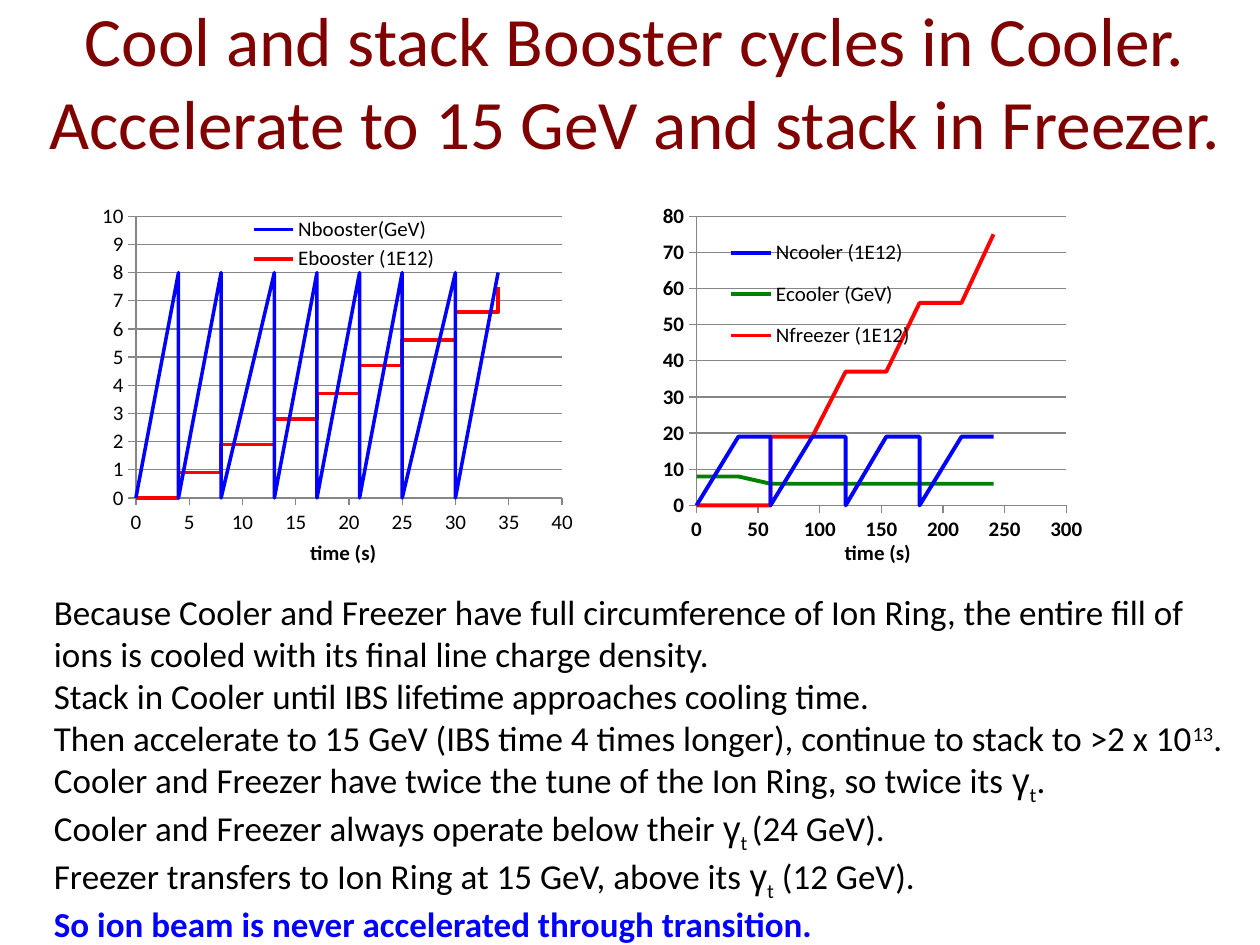
from typing import NamedTuple

from lxml import etree
from pptx import Presentation
from pptx import util as u
from pptx.chart.data import XyChartData
from pptx.dml.color import RGBColor
from pptx.enum import chart as chart_enum
from pptx.enum import text
from pptx.oxml.ns import qn

MAROON = RGBColor(0x80, 0x00, 0x00)
BLACK = RGBColor(0x00, 0x00, 0x00)
BLUE = RGBColor(0x00, 0x00, 0xFF)
RED = RGBColor(0xFF, 0x00, 0x00)
GREEN = RGBColor(0x00, 0x80, 0x00)
GREY = RGBColor(0x86, 0x86, 0x86)

WIDTH, HEIGHT = u.Inches(10), u.Inches(7.5)
COLUMN, ROW = WIDTH / 100, HEIGHT / 75
SUPER, SUB = 30000, -25000


class Area(NamedTuple):
    column: float
    row: float
    columns: float
    rows: float

    def lengths(self) -> tuple:
        return (round(self.column * COLUMN), round(self.row * ROW),
                round(self.columns * COLUMN), round(self.rows * ROW))


class Curve(NamedTuple):
    name: str
    color: RGBColor
    values: list


class Graph(NamedTuple):
    area: Area
    times: list
    curves: list
    line_width: float
    plot_layout: dict
    legend_layout: dict
    title_layout: dict
    bold_ticks: bool = False
    maximum: float | None = None


BOOSTER_TIMES = [0, 4, 8, 13, 17, 21, 25, 30, 34]
BOOSTER_LEVELS = [0, 0.9, 1.9, 2.8, 3.7, 4.7, 5.6, 6.6, 7.5]
BOOSTER_POINTS = range(24)

GRAPHS = [
    Graph(
        Area(7.2, 15.4, 39.8, 30),
        [BOOSTER_TIMES[(i + 2) // 3] for i in BOOSTER_POINTS],
        [Curve("Nbooster(GeV)", BLUE, [8 if i % 3 else 0 for i in BOOSTER_POINTS]),
         Curve("Ebooster (1E12)", RED, [BOOSTER_LEVELS[(i + 1) // 3] for i in BOOSTER_POINTS])],
        2,
        dict(x=0.09, y=0.06, w=0.85, h=0.76),
        dict(x=0.28, y=0.05, w=0.45, h=0.17),
        dict(x=0.43, y=0.92),
        maximum=10,
    ),
    Graph(
        Area(51.7, 15.4, 35.8, 30),
        [0, 34, 60, 60, 60, 94, 121, 121, 154, 181, 181, 215, 241],
        [Curve("Ncooler (1E12)", BLUE, [0, 19, 19, 0] + [0, 19, 19] * 3),
         Curve("Ecooler (GeV)", GREEN, [8] * 2 + [6] * 11),
         Curve("Nfreezer (1E12)", RED, [0] * 3 + [19] * 3 + [37] * 3 + [56] * 3 + [75])],
        2.25,
        dict(x=0.1, y=0.06, w=0.82, h=0.78),
        dict(x=0.15, y=0.08, w=0.45, h=0.38),
        dict(x=0.42, y=0.92),
        bold_ticks=True,
    ),
]

GAMMA = ("γ", dict(name="Arial"))
PARAGRAPHS = [
    [("Because Cooler and Freezer have full circumference of Ion Ring, the entire fill of "
      "ions is cooled with its final line charge density.", {})],
    [("Stack in Cooler until IBS lifetime approaches cooling time.", {})],
    [("Then accelerate to 15 GeV (IBS time 4 times longer), continue to stack to >2 x 10", {}),
     ("13", dict(baseline=SUPER)), (".", {})],
    [("Cooler and Freezer have twice the tune of the Ion Ring, so twice its ", {}),
     GAMMA, ("t", dict(baseline=SUB)), (".", {})],
    [("Cooler and Freezer always operate below their ", {}),
     GAMMA, ("t ", dict(baseline=SUB)), ("(24 GeV).", {})],
    [("Freezer transfers to Ion Ring at 15 GeV, above its ", {}),
     GAMMA, ("t", dict(baseline=SUB)), (" (12 GeV).", {})],
    [("So ion beam is never accelerated through transition.", dict(color=BLUE, bold=True))],
]


def format_font(font, size: float, color: RGBColor = BLACK, bold: bool = False,
                name: str = "Calibri") -> None:
    font.size = u.Pt(size)
    font.color.rgb = color
    font.bold = bold
    font.name = name


def add_span(para, words: str, *, size: float = 20, baseline: int = 0, **style) -> None:
    span = para.add_run()
    span.text = words
    format_font(span.font, size, **style)
    if baseline:
        span._r.get_or_add_rPr().set("baseline", str(baseline))


def set_layout(parent, inner: bool = False, **shares: float) -> None:
    for old in parent.findall(qn("c:layout")):
        parent.remove(old)
    layout = etree.Element(qn("c:layout"))
    manual = etree.SubElement(layout, qn("c:manualLayout"))
    settings = {"layoutTarget": "inner"} if inner else {}
    settings |= {"xMode": "edge", "yMode": "edge"} | shares
    for tag, value in settings.items():
        etree.SubElement(manual, qn(f"c:{tag}")).set("val", str(value))
    overlay = parent.find(qn("c:overlay"))
    parent.insert(0 if overlay is None else parent.index(overlay), layout)


def draw_title(page) -> None:
    title = page.shapes.title
    title.left, title.top, title.width, title.height = Area(1.8, 0.1, 97.2, 12.5).lengths()
    frame = title.text_frame
    frame.auto_size = text.MSO_AUTO_SIZE.NONE
    frame.vertical_anchor = text.MSO_ANCHOR.MIDDLE
    para = frame.paragraphs[0]
    para.alignment = text.PP_ALIGN.CENTER
    add_span(para, "Cool and stack Booster cycles in Cooler.", size=39.6, color=MAROON)
    para.add_line_break()
    add_span(para, "Accelerate to 15 GeV and stack in Freezer.", size=39.6, color=MAROON)


def draw_graph(page, graph: Graph) -> None:
    data = XyChartData()
    for curve in graph.curves:
        points = data.add_series(curve.name)
        for time, value in zip(graph.times, curve.values):
            points.add_data_point(time, value)
    chart = page.shapes.add_chart(chart_enum.XL_CHART_TYPE.XY_SCATTER_LINES_NO_MARKERS,
                                  *graph.area.lengths(), data).chart
    chart.has_title = False
    format_font(chart.font, 10)
    plot = chart.plots[0]
    plot.vary_by_categories = False
    for series, curve in zip(plot.series, graph.curves):
        series.smooth = False
        series.format.line.color.rgb = curve.color
        series.format.line.width = u.Pt(graph.line_width)

    for axis in (chart.category_axis, chart.value_axis):
        axis.has_major_gridlines = axis is not chart.category_axis
        axis.major_tick_mark = chart_enum.XL_TICK_MARK.OUTSIDE
        axis.minor_tick_mark = chart_enum.XL_TICK_MARK.NONE
        axis.format.line.color.rgb = GREY
        format_font(axis.tick_labels.font, 12, bold=graph.bold_ticks)
    time_axis, value_axis = chart.category_axis, chart.value_axis
    time_axis.has_major_gridlines = False
    value_axis.has_major_gridlines = True
    value_axis.major_gridlines.format.line.color.rgb = GREY
    if graph.maximum is not None:
        value_axis.maximum_scale = graph.maximum
    add_span(time_axis.axis_title.text_frame.paragraphs[0], "time (s)", size=12, bold=True)

    chart.has_legend = True
    chart.legend.position = chart_enum.XL_LEGEND_POSITION.RIGHT
    chart.legend.include_in_layout = False
    format_font(chart.legend.font, 12)
    set_layout(chart._chartSpace.chart.plotArea, inner=True, **graph.plot_layout)
    set_layout(chart.legend._element, **graph.legend_layout)
    set_layout(time_axis.axis_title._element, **graph.title_layout)


def draw_notes(page) -> None:
    box = page.shapes.add_textbox(*Area(3.3, 46.4, 96.7, 27.9).lengths())
    frame = box.text_frame
    frame.word_wrap = True
    frame.auto_size = text.MSO_AUTO_SIZE.SHAPE_TO_FIT_TEXT
    for number, spans in enumerate(PARAGRAPHS):
        para = frame.add_paragraph() if number else frame.paragraphs[0]
        for words, style in spans:
            add_span(para, words, **style)


def main() -> None:
    deck = Presentation()
    deck.slide_width, deck.slide_height = WIDTH, HEIGHT
    page = deck.slides.add_slide(deck.slide_layouts[5])
    draw_title(page)
    draw_notes(page)
    for graph in GRAPHS:
        draw_graph(page, graph)
    deck.save("out.pptx")


if __name__ == "__main__":
    main()
